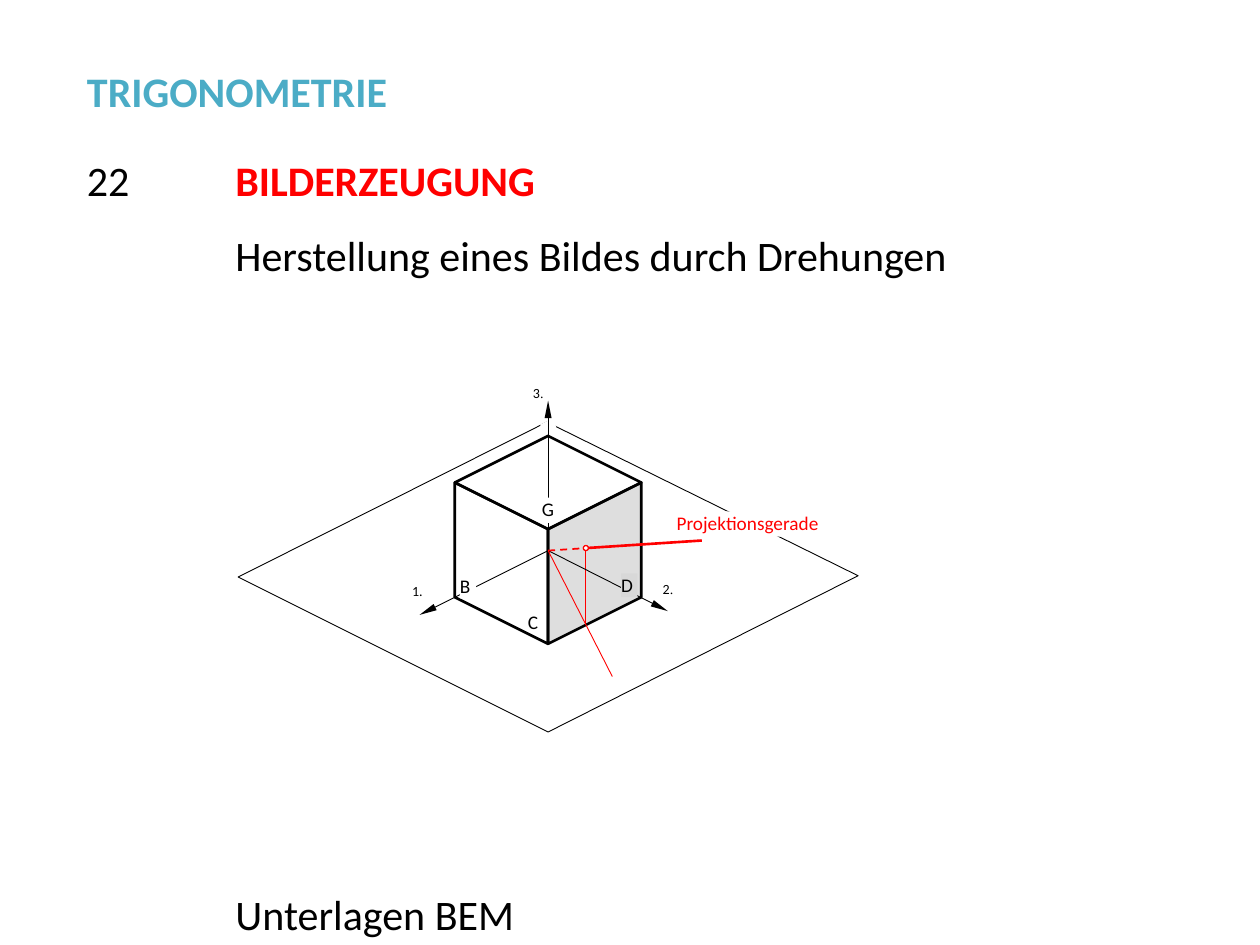
from dataclasses import dataclass

from lxml import etree
from pptx import Presentation
from pptx import util as u
from pptx.dml.color import RGBColor
from pptx.enum import dml, shapes, text
from pptx.oxml.ns import qn

PX = 9144  # EMU; 100 px to the inch
BLACK, WHITE, RED, TEAL = "000000", "FFFFFF", "FF0000", "4BACC6"
SANS, SERIF = "Calibri", "Times New Roman"

Point = tuple[int, int]
CENTER, PIERCE = (435, 437), (465, 435)
TOP, FRONT, BOTTOM = (435, 346), (435, 420), (435, 511)
LEFT_TOP, LEFT_BOTTOM = (361, 383), (361, 474)
RIGHT_TOP, RIGHT_BOTTOM = (509, 383), (509, 474)


@dataclass
class Heading:
    wording: str
    box: tuple[int, int, int, int]
    color: str = BLACK
    bold: bool = False


@dataclass
class Outline:
    points: list[Point]
    width: float = 1.5
    color: str = BLACK
    closed: bool = True
    fill: str | None = None
    opacity: int = 100


@dataclass
class Segment:
    start: Point
    end: Point
    color: str = BLACK
    width: float = 0.5
    arrow: bool = False
    dashed: bool = False


@dataclass
class Label:
    spans: list[tuple[str, str]]
    box: tuple[int, int, int, int]
    size: int = 11
    color: str = BLACK
    fill: str | None = None


HEADINGS = [
    Heading("22", (59, 118, 102, 50)),
    Heading("BILDERZEUGUNG", (177, 118, 690, 50), RED, True),
    Heading("Herstellung eines Bildes durch Drehungen", (177, 177, 690, 50)),
    Heading("Unterlagen BEM", (177, 700, 648, 50)),
]
TITLE = Heading("TRIGONOMETRIE", (59, 47, 441, 50), TEAL, True)

OUTLINES = [
    Outline([(434, 335), (681, 457), (435, 581), (189, 458)], 0.5),
    Outline([(429, 338), (435, 335), (441, 339)], color=WHITE, closed=False),
    Outline([TOP, RIGHT_TOP, FRONT, LEFT_TOP]),
    Outline([RIGHT_BOTTOM, BOTTOM, FRONT, RIGHT_TOP], fill="BFBFBF", opacity=50),
    Outline([LEFT_BOTTOM, BOTTOM, FRONT, LEFT_TOP]),
]
AXIS_LABELS = [
    Label([("1.", SANS)], (327, 462, 18, 27), 8),
    Label([("2", SANS), (".", SERIF)], (526, 461, 18, 27), 8),
    Label([("3", SANS), (".", SERIF)], (423, 305, 18, 27), 8),
]
SEGMENTS = [
    Segment((465, 496), PIERCE, RED),
    Segment(CENTER, (435, 318), arrow=True),
    Segment(CENTER, (530, 485), arrow=True),
    Segment(CENTER, (333, 488), arrow=True),
    Segment(CENTER, PIERCE, RED, 1, dashed=True),
    Segment(CENTER, (486, 537), RED),
    Segment(PIERCE, (557, 429), RED, 1.5),
]
POINT_LABELS = [
    Label([("B", SANS)], (365, 456, 13, 19), fill=WHITE),
    Label([("G", SANS)], (430, 395, 11, 20), fill=WHITE),
    Label([("C", SANS)], (419, 484, 18, 27)),
    Label([("D", SANS)], (493, 455, 13, 19), fill="D8D8D8"),
    Label([("Projektionsgerade", SANS)], (537, 406, 133, 20), color=RED, fill=WHITE),
]


def rgb(color: str) -> RGBColor:
    return RGBColor.from_string(color)


def px(*lengths: int) -> list[int]:
    return [length * PX for length in lengths]


def style_span(span, font: str, size: int, color: str, bold: bool = False) -> None:
    span.font.name, span.font.size, span.font.bold = font, u.Pt(size), bold
    span.font.color.rgb = rgb(color)


def style_line(line, color: str, width: float) -> None:
    line.color.rgb = rgb(color)
    line.width = u.Pt(width)


def fill_heading(box, heading: Heading) -> None:
    box.left, box.top, box.width, box.height = px(*heading.box)
    frame = box.text_frame
    frame.text = heading.wording
    frame.word_wrap = True
    frame.auto_size = text.MSO_AUTO_SIZE.SHAPE_TO_FIT_TEXT
    frame.vertical_anchor = text.MSO_ANCHOR.TOP
    para = frame.paragraphs[0]
    para.alignment = text.PP_ALIGN.LEFT
    style_span(para.runs[0], SANS, 24, heading.color, heading.bold)


def draw_outline(drawing, outline: Outline) -> None:
    builder = drawing.build_freeform(*outline.points[0], scale=PX)
    builder.add_line_segments(outline.points[1:], close=outline.closed)
    shape = builder.convert_to_shape()
    shape.shadow.inherit = False
    style_line(shape.line, outline.color, outline.width)
    if outline.fill is None:
        shape.fill.background()
        return
    shape.fill.solid()
    shape.fill.fore_color.rgb = rgb(outline.fill)
    tint = shape.element.spPr.find(qn("a:solidFill"))[0]
    etree.SubElement(tint, qn("a:alpha"), val=str(outline.opacity * 1000))


def draw_segment(drawing, segment: Segment) -> None:
    line = drawing.add_connector(
        shapes.MSO_CONNECTOR.STRAIGHT, *px(*segment.start, *segment.end))
    style_line(line.line, segment.color, segment.width)
    if segment.dashed:
        line.line.dash_style = dml.MSO_LINE.DASH
    properties = line.element.spPr
    if segment.arrow:
        etree.SubElement(properties.find(qn("a:ln")), qn("a:tailEnd"),
                         type="triangle", w="sm", len="lg")
    etree.SubElement(properties, qn("a:effectLst"))


def draw_label(drawing, label: Label) -> None:
    if label.fill:
        box = drawing.add_shape(shapes.MSO_SHAPE.RECTANGLE, *px(*label.box))
        box.shadow.inherit = False
        box.fill.solid()
        box.fill.fore_color.rgb = rgb(label.fill)
        box.line.fill.background()
    else:
        box = drawing.add_textbox(*px(*label.box))
    frame = box.text_frame
    frame.margin_left = frame.margin_right = frame.margin_top = frame.margin_bottom = 0
    frame.word_wrap = True
    frame.vertical_anchor = text.MSO_ANCHOR.TOP
    para = frame.paragraphs[0]
    para.alignment = text.PP_ALIGN.LEFT
    para.space_after = u.Pt(10)
    for wording, font in label.spans:
        span = para.add_run()
        span.text = wording
        style_span(span, font, label.size, label.color)


def draw_pierce_point(drawing) -> None:
    dot = drawing.add_shape(shapes.MSO_SHAPE.OVAL, *px(PIERCE[0] - 2, PIERCE[1] - 2, 4, 4))
    dot.shadow.inherit = False
    dot.fill.solid()
    dot.fill.fore_color.rgb = rgb(WHITE)
    style_line(dot.line, RED, 0.75)


def main() -> None:
    deck = Presentation()
    deck.slide_width, deck.slide_height = px(1000, 750)
    page = deck.slides.add_slide(deck.slide_layouts.get_by_name("Title Only"))
    fill_heading(page.shapes.title, TITLE)
    for heading in HEADINGS:
        fill_heading(page.shapes.add_textbox(*px(*heading.box)), heading)

    drawing = page.shapes.add_group_shape().shapes
    for outline in OUTLINES:
        draw_outline(drawing, outline)
    for label in AXIS_LABELS:
        draw_label(drawing, label)
    for segment in SEGMENTS:
        draw_segment(drawing, segment)
    draw_pierce_point(drawing)
    for label in POINT_LABELS:
        draw_label(drawing, label)
    deck.save("out.pptx")


if __name__ == "__main__":
    main()
